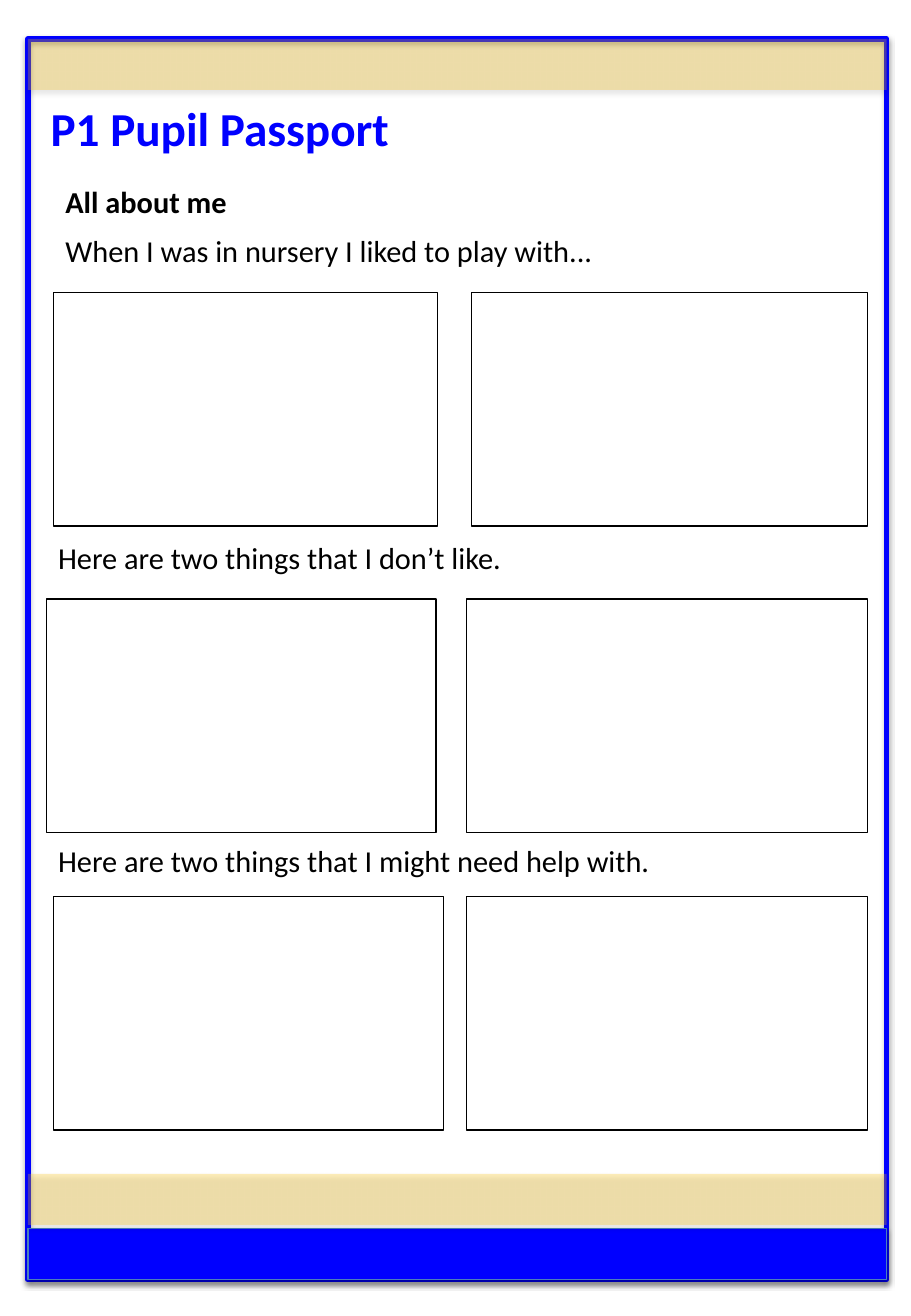
import pptx
import pptx.util
import pptx.dml.color
import pptx.enum.shapes
import pptx.enum.text
import pptx.oxml
import pptx.oxml.ns
from dataclasses import dataclass

Pt = pptx.util.Pt
RGB = pptx.dml.color.RGBColor.from_string
NS = pptx.oxml.ns.nsdecls("a")


@dataclass
class Theme:
    font: str = "Calibri"
    blue: str = "0000FF"
    gold: str = "FEC309"
    edge: str = "4B7EBC"
    ink: str = "000000"
    head: float = 28
    text: float = 18


class Page:
    def __init__(self, slide, theme):
        self.slide = slide
        self.theme = theme

    def rect(self, x, y, w, h, fill=None, alpha=None, line=None, width=0.75,
             shade=False):
        kind = pptx.enum.shapes.MSO_SHAPE.RECTANGLE
        box = self.slide.shapes.add_shape(kind, Pt(x), Pt(y), Pt(w), Pt(h))
        box.shadow.inherit = False
        if fill:
            box.fill.solid()
            box.fill.fore_color.rgb = RGB(fill)
        else:
            box.fill.background()
        if line:
            box.line.color.rgb = RGB(line)
            box.line.width = Pt(width)
        else:
            box.line.fill.background()
        props = box.element.spPr
        if alpha:
            tint = props.find(".//" + pptx.oxml.ns.qn("a:srgbClr"))
            tint.append(pptx.oxml.parse_xml(
                f'<a:alpha {NS} val="{alpha * 1000}"/>'))
        if shade:
            glow = props.find(pptx.oxml.ns.qn("a:effectLst"))
            glow.append(pptx.oxml.parse_xml(
                f'<a:outerShdw {NS} blurRad="{Pt(3.1)}" dist="{Pt(1.8)}" '
                f'dir="5400000" rotWithShape="0"><a:srgbClr val="{self.theme.ink}">'
                '<a:alpha val="35000"/></a:srgbClr></a:outerShdw>'))

    def style(self, box, text, size, color, bold, left=7.2):
        frame = box.text_frame
        frame.text = text
        frame.word_wrap = True
        frame.auto_size = pptx.enum.text.MSO_AUTO_SIZE.NONE
        frame.vertical_anchor = pptx.enum.text.MSO_ANCHOR.TOP
        frame.margin_left = Pt(left)
        line = frame.paragraphs[0]
        line.alignment = pptx.enum.text.PP_ALIGN.LEFT
        font = line.runs[0].font
        font.name, font.size, font.bold = self.theme.font, Pt(size), bold
        font.color.rgb = RGB(color)

    def title(self, text, x, y, w, h, left):
        box = self.slide.shapes.title
        box.left, box.top, box.width, box.height = Pt(x), Pt(y), Pt(w), Pt(h)
        self.style(box, text, self.theme.head, self.theme.blue, True, left)

    def label(self, text, x, y, w, h, bold=False):
        box = self.slide.shapes.add_textbox(Pt(x), Pt(y), Pt(w), Pt(h))
        self.style(box, text, self.theme.text, self.theme.ink, bold)


def main():
    deck = pptx.Presentation()
    deck.slide_width, deck.slide_height = Pt(540), Pt(779.76)
    theme = Theme()
    page = Page(deck.slides.add_slide(deck.slide_layouts[5]), theme)

    # Page frame and bands
    left, top, wide, tall, band = 16.56, 23.04, 509.04, 735.12, 30.24
    page.rect(left, top, wide, tall, line=theme.blue, width=3.25, shade=True)
    page.rect(left, top, wide, band, theme.gold, alpha=28, shade=True)
    page.rect(left, top + tall - band, wide, band, theme.blue,
              line=theme.edge, shade=True)
    page.rect(left, 695.52, wide, band, theme.gold, alpha=28, shade=True)

    # Headings
    page.title("P1 Pupil Passport", left, 55.44, wide, 41.04, 13.5)
    page.label("All about me", 31.68, 105.12, 204.48, 28.8, bold=True)

    # Prompts, each above a pair of answer boxes:
    # text, text x, text y, box y, (left, right) of each box
    rows = [
        ("When I was in nursery I liked to play with...", 31.68, 133.92,
         173.52, [(31.68, 259.2), (279.36, 514.08)]),
        ("Here are two things that I don’t like.", 27.36, 316.08,
         354.96, [(27.36, 258.48), (276.48, 514.08)]),
        ("Here are two things that I might need help with.", 27.36, 495.36,
         531.36, [(31.68, 262.8), (276.48, 514.08)]),
    ]
    for text, x, y, box_y, pair in rows:
        page.label(text, x, y, 470.16, 51.12)
        for start, end in pair:
            page.rect(start, box_y, end - start, 138.24, line=theme.ink)

    deck.save("out.pptx")


if __name__ == "__main__":
    main()
